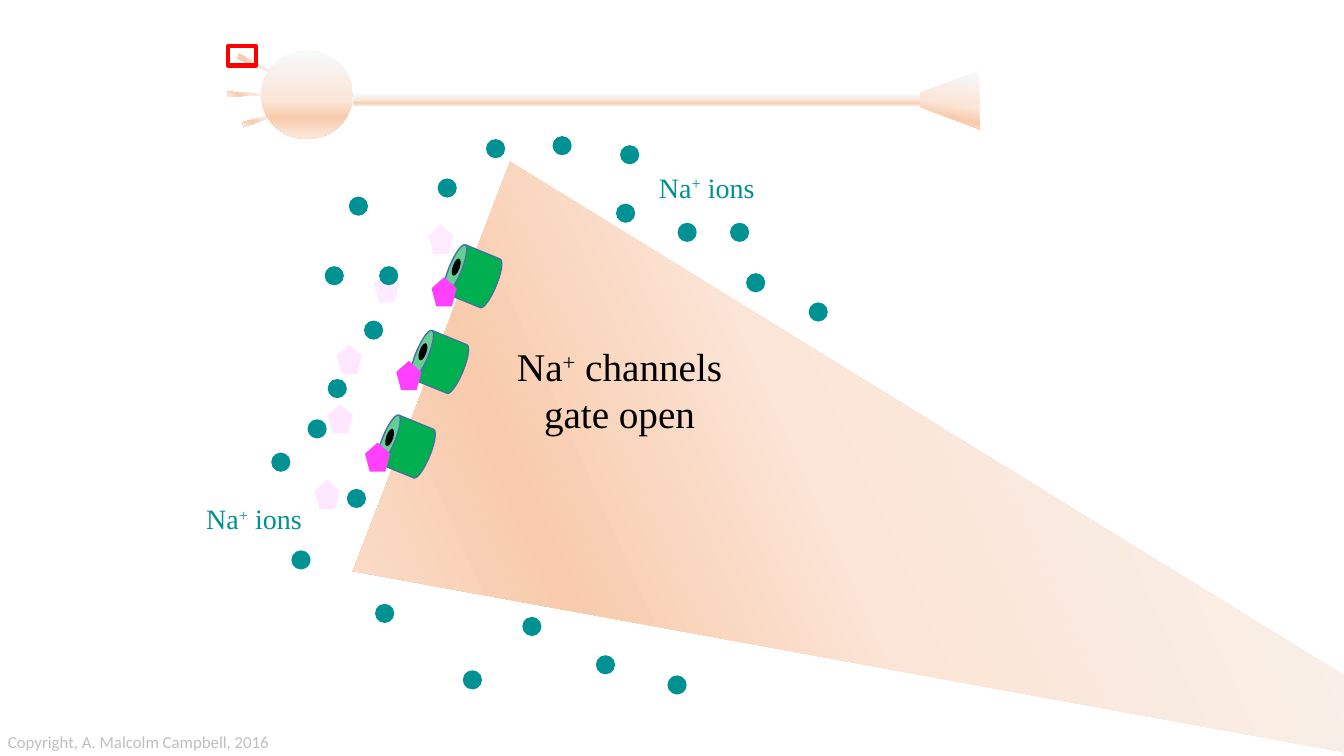
from copy import deepcopy

from lxml.etree import SubElement
from pptx import Presentation
from pptx.dml.color import RGBColor
from pptx.enum.shapes import MSO_SHAPE as Shape
from pptx.enum.text import PP_ALIGN as Align
from pptx.oxml.ns import qn
from pptx.util import Pt

PX = 9144  # EMU, 100 px to the inch
RED = RGBColor(0xFF, 0x00, 0x00)
MAGENTA = RGBColor(0xFF, 0x40, 0xFF)
GREEN = RGBColor(0x00, 0xB0, 0x50)
BLUE = RGBColor(0x43, 0x73, 0x9E)
TEAL = RGBColor(0x00, 0x91, 0x93)
BLACK = RGBColor(0x00, 0x00, 0x00)
GRAY = RGBColor(0xBF, 0xBF, 0xBF)
PEACH = RGBColor(0xFB, 0xE5, 0xD6)
MEMBRANE_STOPS = [(0, RGBColor(0xF7, 0xFA, 0xFD)), (0.57, PEACH),
                  (0.76, RGBColor(0xF8, 0xCB, 0xAD)), (0.96, PEACH)]

deck = Presentation()
deck.slide_width, deck.slide_height = 1333 * PX, 750 * PX
page = deck.slides.add_slide(deck.slide_layouts[6])


def add_shape(kind, left, top, width, height, color=None, rotation=0):
    shape = page.shapes.add_shape(kind, left * PX, top * PX, width * PX, height * PX)
    shape.shadow.inherit = False
    shape.rotation = rotation
    shape.line.fill.background()
    if color is None:
        shape.fill.background()
    else:
        shape.fill.solid()
        shape.fill.fore_color.rgb = color
    return shape


def add_text(left, top, width, height, lines, size, color, font="Times New Roman", align=Align.CENTER):
    """Each line is a list of spans; a span "+" is raised."""
    box = page.shapes.add_textbox(left * PX, top * PX, width * PX, height * PX)
    frame = box.text_frame
    frame.word_wrap = True
    for number, line in enumerate(lines):
        para = frame.add_paragraph() if number else frame.paragraphs[0]
        para.alignment = align
        para.font.name, para.font.size, para.font.color.rgb = font, Pt(size), color
        for text in line:
            span = para.add_run()
            span.text = text
            if text == "+":
                span._r.get_or_add_rPr().set("baseline", "30000")
    return box


# Neuron: enlarged dendrite, three small dendrites, cell body, axon, terminal
neuron_parts = [
    (Shape.ISOSCELES_TRIANGLE, 751, -8, 435, 1158, 111, 45),
    (Shape.ISOSCELES_TRIANGLE, 256, 42, 5, 49, 116, 45),
    (Shape.ISOSCELES_TRIANGLE, 248, 69, 5, 49, 90, 45),
    (Shape.ISOSCELES_TRIANGLE, 262, 92, 5, 49, 73, 45),
    (Shape.OVAL, 259, 50, 91, 88, 0, 90),
    (Shape.RECTANGLE, 350, 93, 564, 12, 0, 90),
    (Shape.TRAPEZOID, 913, 70, 58, 58, 270, 190),
]
for kind, left, top, width, height, rotation, angle in neuron_parts:
    part = add_shape(kind, left, top, width, height, PEACH, rotation)
    if kind == Shape.TRAPEZOID:
        part.adjustments[0] = 0.377
    part.fill.gradient()
    part.fill.gradient_angle = 360 - angle
    stop_list = part._element.spPr.find(".//" + qn("a:gsLst"))
    for extra in range(len(MEMBRANE_STOPS) - len(stop_list)):
        stop_list.append(deepcopy(stop_list[0]))
    for stop, (position, color) in zip(part.fill.gradient_stops, MEMBRANE_STOPS):
        stop.position = position
        stop.color.rgb = color

zoom_frame = add_shape(Shape.RECTANGLE, 226, 46, 28, 19)
zoom_frame.line.color.rgb = RED
zoom_frame.line.width = Pt(3)

# Faded neurotransmitters
for left, top, opacity in [(371, 271, 10), (425, 223, 10), (312, 476, 12),
                           (325, 401, 12), (334, 342, 12)]:
    faded = add_shape(Shape.REGULAR_PENTAGON, left, top, 25, 29, MAGENTA)
    color_element = faded._element.spPr.find(".//" + qn("a:srgbClr"))
    SubElement(color_element, qn("a:alpha"), val=str(opacity * 1000))

# Sodium channels, their bound neurotransmitters and open pores
for left, top in [(443, 249), (410, 334), (377, 418)]:
    channel = add_shape(Shape.CAN, left, top, 52, 50, GREEN, 292.3)
    channel.line.color.rgb = BLUE
    channel.line.width = Pt(1)

add_text(469, 335, 291, 104, [["Na", "+", " channels"], ["gate open"]], 28, BLACK)

for left, top in [(428, 275), (362, 439), (393, 358)]:
    add_shape(Shape.REGULAR_PENTAGON, left, top, 25, 29, MAGENTA)
for left, top in [(416, 340), (449, 256), (383, 425)]:
    add_shape(Shape.OVAL, left, top, 7, 18, BLACK, 19)

sodium_ions = [
    (346, 195), (322, 264), (376, 264), (269, 449), (305, 416), (361, 318),
    (344, 485), (548, 135), (434, 177), (372, 599), (482, 138), (325, 376),
    (289, 546), (662, 670), (518, 612), (459, 665), (591, 650), (802, 300),
    (615, 144), (611, 202), (724, 221), (672, 221), (740, 271),
]
for left, top in sodium_ions:
    add_shape(Shape.OVAL, left, top, 19, 19, TEAL)
for left, top in [(638, 164), (189, 493)]:
    add_text(left, top, 126, 44, [["Na", "+", " ions"]], 20, TEAL)

credit = add_text(-2, 721, 282, 30, [["Copyright, A. Malcolm Campbell, 2016"]], 12, GRAY,
                  "Calibri", Align.LEFT)
credit.text_frame.word_wrap = False

deck.save("out.pptx")
